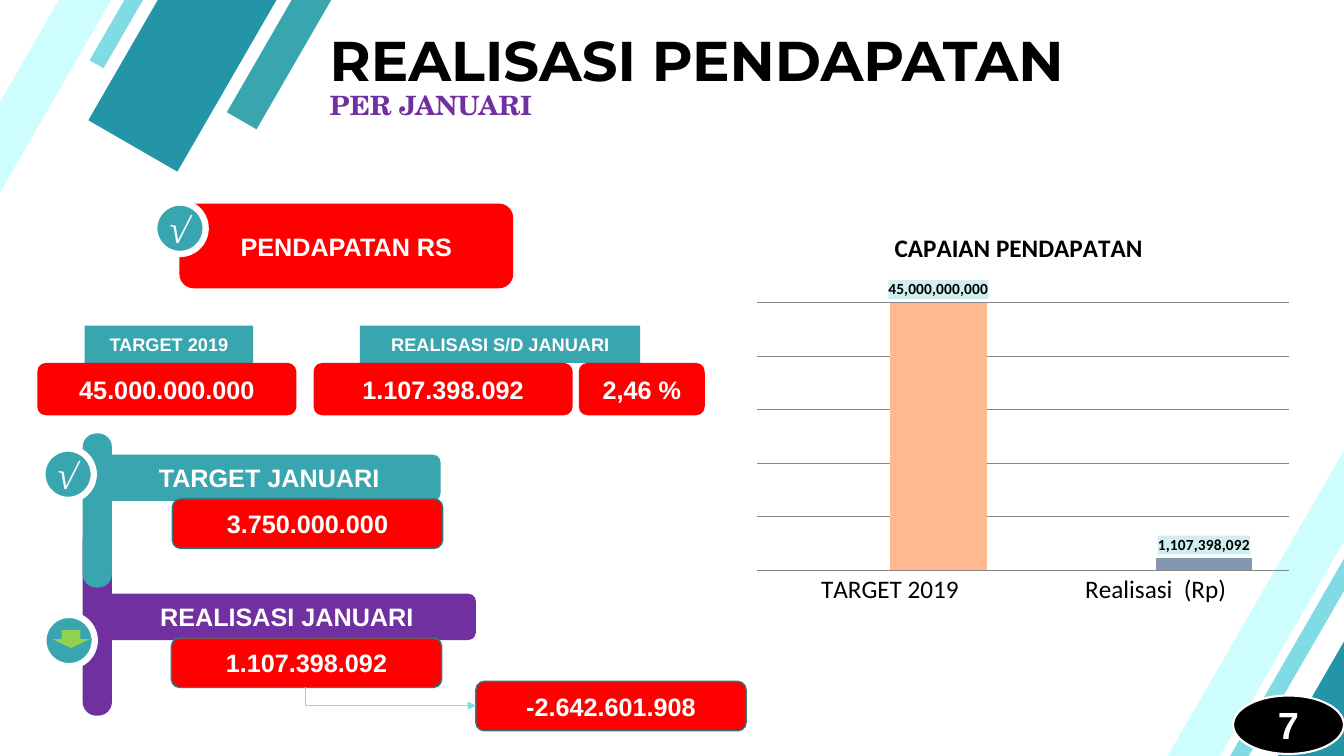
from lxml import etree
from pptx import Presentation, util as u
from pptx.chart.data import CategoryChartData
from pptx.dml.color import RGBColor
from pptx.enum import chart as ch, shapes, text
from pptx.oxml import parse_xml
from pptx.oxml.ns import nsdecls, qn

W, H = u.Inches(13.33), u.Inches(7.5)
COL, ROW = W / 133.3, H / 75
C = dict(teal="39A5AE", deep="2395A6", sky="80DBE4", ice="CDFEFD", edge="2A7A81",
         red="FF0000", purple="7030A0", green="92D050", peach="FEB98F", slate="8497B0",
         grid="868686", label="D0EDEF", white="FFFFFF", black="000000")
MS = shapes.MSO_SHAPE
ROUND, RECT, OVAL = MS.ROUNDED_RECTANGLE, MS.RECTANGLE, MS.OVAL


def rgb(name):
    return RGBColor.from_string(C[name])


def grid(x, y, w, h):
    return [round(v) for v in (x * COL, y * ROW, w * COL, h * ROW)]


def font(f, size, color="black", name="Arial", bold=True):
    f.size, f.name, f.bold = u.Pt(size), name, bold
    f.color.rgb = rgb(color)


def write(sp, words, size, color="white", name="Arial", align=text.PP_ALIGN.CENTER,
          anchor=text.MSO_ANCHOR.MIDDLE):
    tf = sp.text_frame
    tf.text = words
    tf.word_wrap = True
    tf.vertical_anchor = anchor
    tf.margin_left = tf.margin_right = u.Inches(0.07)
    tf.margin_top = tf.margin_bottom = u.Inches(0.03)
    p = tf.paragraphs[0]
    p.alignment = align
    font(p.runs[0].font, size, color, name)
    return p


def block(s, kind, box, fill, words="", size=18, line=None, width=1, rot=0, name="Arial"):
    sp = s.shapes.add_shape(kind, *grid(*box))
    sp.shadow.inherit = False
    sp.rotation = rot
    sp.fill.solid()
    sp.fill.fore_color.rgb = rgb(fill)
    if line:
        sp.line.color.rgb = rgb(line)
        sp.line.width = u.Pt(width)
    else:
        sp.line.fill.background()
    if words:
        write(sp, words, size, name=name)
    return sp


def heading(s, box, words, size, color, name, spacing):
    sp = s.shapes.add_textbox(*grid(*box))
    p = write(sp, words, size, color, name, text.PP_ALIGN.LEFT, text.MSO_ANCHOR.TOP)
    p.line_spacing = spacing


def badge(s, x, y, mark=""):
    block(s, OVAL, (x, y, 5.1, 5.1), "teal", mark, 27, "white", 4.5, 9.9, "Times New Roman")


def bar(s, y, h, fill):
    block(s, ROUND, (8.2, y, 2.9, h), fill).adjustments[0] = 0.466


def elbow(s, x1, y1, x2, y2):
    dx, dy = x2 - x1, y2 - y1
    cx, cy = (x1 + x2) / 2, (y1 + y2) / 2
    ends = grid(cx + dy / 2, cy - dx / 2, cx - dy / 2, cy + dx / 2)
    cn = s.shapes.add_connector(shapes.MSO_CONNECTOR.ELBOW, *ends)
    cn.line.color.rgb = rgb("sky")
    cn.line.width = u.Pt(1)
    pr = cn._element.spPr
    pr.find(qn("a:xfrm")).set("rot", str(270 * 60000))
    pr.find(qn("a:prstGeom")).set("prst", "bentConnector2")
    etree.SubElement(pr.find(qn("a:ln")), qn("a:tailEnd")).set("type", "triangle")
    etree.SubElement(pr, qn("a:effectLst"))


def place(el, index, **shares):
    for old in el.findall(qn("c:layout")):
        el.remove(old)
    layout = etree.Element(qn("c:layout"))
    manual = etree.SubElement(layout, qn("c:manualLayout"))
    if "w" in shares:
        etree.SubElement(manual, qn("c:layoutTarget")).set("val", "inner")
    for key in "xy":
        etree.SubElement(manual, qn(f"c:{key}Mode")).set("val", "edge")
    for key, share in shares.items():
        etree.SubElement(manual, qn(f"c:{key}")).set("val", str(share))
    el.insert(index, layout)


def income_chart(s, box):
    data = CategoryChartData()
    data.categories = ["TARGET 2019", "Realisasi  (Rp)"]
    data.add_series("Series 1", [None, None])
    data.add_series("Series 2", [45000000000, 1107398092])
    kind = ch.XL_CHART_TYPE.COLUMN_CLUSTERED
    chart = s.shapes.add_chart(kind, *grid(*box), data).chart
    font(chart.font, 10.5, name="Calibri", bold=False)
    chart.has_legend = False
    tf = chart.chart_title.text_frame
    tf.text = "CAPAIAN PENDAPATAN"
    font(tf.paragraphs[0].runs[0].font, 18, name="Calibri")
    place(chart.chart_title._element, 1, x=0.26, y=0.05)
    place(chart._chartSpace.chart.plotArea, 0, x=0.02, y=0.24, w=0.96, h=0.66)

    va, ca = chart.value_axis, chart.category_axis
    va.minimum_scale, va.maximum_scale, va.major_unit = 0, 25e9, 5e9
    va.visible = False
    va.has_major_gridlines = True
    ca.major_tick_mark = ch.XL_TICK_MARK.NONE
    font(ca.tick_labels.font, 18, name="Calibri", bold=False)
    for rule in (va.major_gridlines.format.line, ca.format.line):
        rule.color.rgb = rgb("grid")
        rule.width = u.Pt(0.75)

    plot = chart.plots[0]
    plot.gap_width, plot.overlap, plot.vary_by_categories = 75, 0, False
    for series, color in zip(plot.series, ("teal", "deep")):
        series.format.fill.solid()
        series.format.fill.fore_color.rgb = rgb(color)
    for i, color in enumerate(("peach", "slate")):
        fill = series.points[i].format.fill
        fill.solid()
        fill.fore_color.rgb = rgb(color)
    labels = series.data_labels
    labels.show_value = True
    labels.number_format, labels.number_format_is_linked = "#,##0", False
    labels.position = ch.XL_LABEL_POSITION.OUTSIDE_END
    font(labels.font, 11, name="Calibri")
    labels._element.find(qn("c:numFmt")).addnext(parse_xml(
        f'<c:spPr {nsdecls("c", "a")}><a:solidFill><a:srgbClr val="{C["label"]}"/>'
        '</a:solidFill></c:spPr>'))


def main():
    prs = Presentation()
    prs.slide_width, prs.slide_height = W, H
    s = prs.slides.add_slide(prs.slide_layouts[6])

    for x, y, h, fill in [(-9.5, -47.7, 3.4, "teal"), (-20.3, -48.6, 10.2, "deep"),
                          (-23.9, -52.4, 1.6, "sky"), (-38.8, -36.4, 4.5, "ice"),
                          (91.2, 25.7, 10.2, "deep"), (86, 22.2, 1.6, "sky"),
                          (71.4, 38.2, 4.5, "ice")]:
        block(s, RECT, (x, y, 133.9, h), fill, rot=300)

    heading(s, (32, 3, 99.8, 7.2), "REALISASI PENDAPATAN", 40, "black", "Montserrat", 0.9)
    heading(s, (32, 8.9, 99.8, 3.9), "PER JANUARI", 19, "purple", "TeX Gyre Schola", u.Pt(20))

    block(s, ROUND, (17.8, 20.2, 33.1, 8.4), "red", "PENDAPATAN RS")
    badge(s, 15.3, 20.1, "√")

    for x, w, words in [(8.4, 16.7, "TARGET 2019"), (35.7, 27.8, "REALISASI S/D JANUARI")]:
        block(s, RECT, (x, 32.3, w, 3.7), "teal", words, 13)
    for x, w, words in [(3.7, 25.7, "45.000.000.000"), (31.1, 25.7, "1.107.398.092"),
                        (57.4, 12.5, "2,46 %")]:
        block(s, ROUND, (x, 36, w, 5.2), "red", words)

    bar(s, 52.1, 18.9, "purple")
    bar(s, 43, 15.3, "teal")
    badge(s, 4.2, 44.5, "√")
    badge(s, 4.3, 61)
    block(s, MS.DOWN_ARROW, (5.2, 62.5, 3.7, 1.8), "green")
    for y, w, fill, words in [(45.1, 34, "teal", "TARGET JANUARI"),
                              (58.9, 37.5, "purple", "REALISASI JANUARI")]:
        block(s, ROUND, (9.7, y, w, 4.6), fill, words)
    for x, y, words in [(17.1, 49.5, "3.750.000.000"), (17, 63.3, "1.107.398.092"),
                        (47.2, 67.6, "-2.642.601.908")]:
        block(s, ROUND, (x, y, 26.8, 4.9), "red", words, line="edge")
    elbow(s, 30.3, 68.2, 47.2, 70)

    block(s, OVAL, (122.3, 69, 11, 5.8), "black", "7", 27, "white", 1.5)
    income_chart(s, (74, 20.4, 54.9, 40.2))
    prs.save("out.pptx")


if __name__ == "__main__":
    main()
